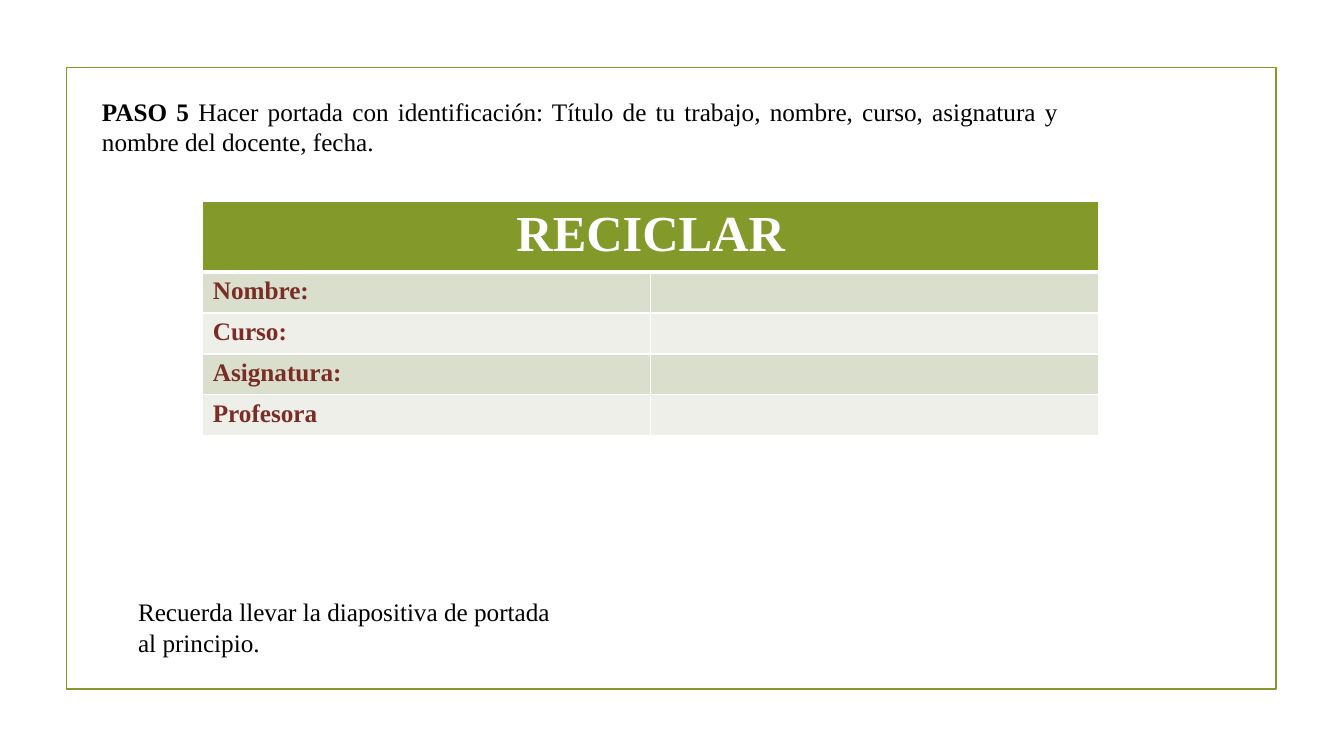
import pptx
import pptx.dml.color
import pptx.enum.shapes
import pptx.enum.text
import pptx.oxml
import pptx.oxml.ns
import pptx.util
from pptx.util import Cm

FONT = "Times New Roman"
COLORS = {
    "green": "83992A",
    "band_dark": "D9DECD",
    "band_light": "EDEFE8",
    "label": "7A2D26",
    "black": "000000",
    "white": "FFFFFF",
}
ALIGN = pptx.enum.text.PP_ALIGN


def rgb(name):
    return pptx.dml.color.RGBColor.from_string(COLORS[name])


def add_run(p, text, color="black", size=18, bold=False):
    r = p.add_run()
    r.text = text
    r.font.name = FONT
    r.font.size = pptx.util.Pt(size)
    r.font.bold = bold
    r.font.color.rgb = rgb(color)


def add_frame(s):
    sp = s.shapes.add_shape(pptx.enum.shapes.MSO_SHAPE.RECTANGLE,
                            Cm(1.68), Cm(1.7), Cm(30.48), Cm(15.67))
    sp.shadow.inherit = False
    sp.fill.background()
    sp.line.color.rgb = rgb("green")
    sp.line.width = pptx.util.Pt(1.25)


def add_text(s, left, top, width, height, runs, align=ALIGN.LEFT):
    tf = s.shapes.add_textbox(Cm(left), Cm(top), Cm(width), Cm(height)).text_frame
    tf.word_wrap = True
    p = tf.paragraphs[0]
    p.alignment = align
    for text, bold in runs:
        add_run(p, text, bold=bold)


def style_cell(cell, fill, bottom=1, top=1):
    # Borders come before the fill in the cell properties
    tc_pr = cell._tc.get_or_add_tcPr()
    for side, points in (("L", 1), ("R", 1), ("T", top), ("B", bottom)):
        tc_pr.append(pptx.oxml.parse_xml(
            f'<a:ln{side} {pptx.oxml.ns.nsdecls("a")} w="{pptx.util.Pt(points)}">'
            f'<a:solidFill><a:srgbClr val="{COLORS["white"]}"/></a:solidFill>'
            f'</a:ln{side}>'))
    cell.fill.solid()
    cell.fill.fore_color.rgb = rgb(fill)


def add_cover_table(s, title, labels):
    header_height, row_height = Cm(1.76), Cm(1.03)
    table = s.shapes.add_table(len(labels) + 1, 2, Cm(5.11), Cm(5.08), Cm(22.58),
                               header_height + row_height * len(labels)).table

    # Header across both columns
    table.rows[0].height = header_height
    header = table.cell(0, 0)
    header.merge(table.cell(0, 1))
    for cell in table.rows[0].cells:
        style_cell(cell, "green", bottom=3)
    p = header.text_frame.paragraphs[0]
    p.alignment = ALIGN.CENTER
    add_run(p, title, "white", 36, True)

    # Banded rows with a label and a blank field
    for i, label in enumerate(labels, start=1):
        table.rows[i].height = row_height
        for cell in table.rows[i].cells:
            style_cell(cell, "band_dark" if i % 2 else "band_light",
                       top=3 if i == 1 else 1)
        add_run(table.cell(i, 0).text_frame.paragraphs[0], label, "label", bold=True)


def main():
    prs = pptx.Presentation()
    prs.slide_width, prs.slide_height = Cm(33.87), Cm(19.05)
    s = prs.slides.add_slide(prs.slide_layouts[6])

    add_frame(s)

    # Instruction
    add_text(s, 2.32, 2.3, 24.61, 1.8, [
        ("PASO 5 ", True),
        ("Hacer portada con identificación: Título de tu trabajo, nombre, curso, "
         "asignatura y nombre del docente, fecha.", False),
    ], ALIGN.JUSTIFY)

    # Cover form
    add_cover_table(s, "RECICLAR", ["Nombre:", "Curso:", "Asignatura:", "Profesora"])

    # Reminder
    add_text(s, 3.23, 14.91, 11.18, 1.8, [
        ("Recuerda llevar la diapositiva de portada al principio.", False),
    ])

    prs.save("out.pptx")


if __name__ == "__main__":
    main()
